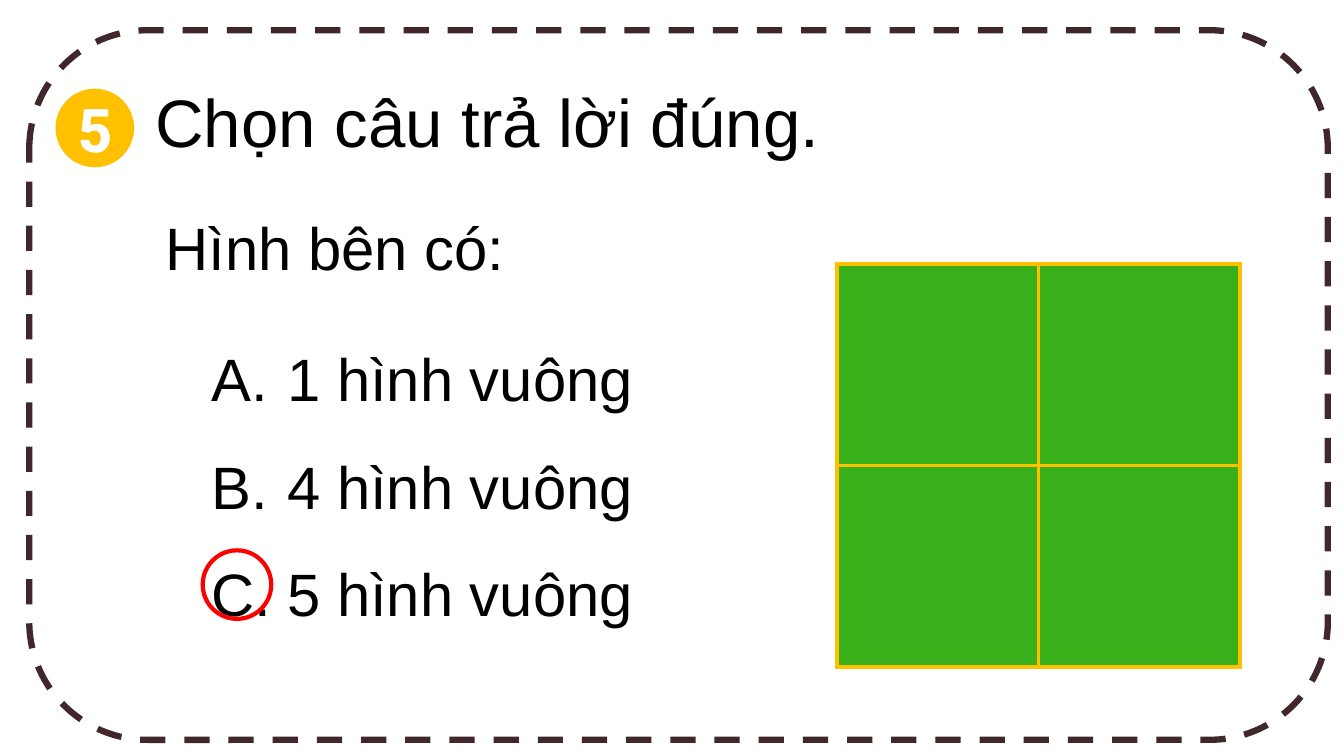
from dataclasses import dataclass
from typing import Optional

from lxml import etree
from pptx import Presentation
from pptx import util as u
from pptx.dml.color import RGBColor
from pptx.enum import dml, shapes, text
from pptx.oxml import ns

SLIDE_WIDTH, SLIDE_HEIGHT = u.Inches(13.33), u.Inches(7.5)


@dataclass(frozen=True)
class Theme:
    paper: str = "FFFFFF"
    ink: str = "000000"
    frame: str = "40272B"
    gold: str = "FFC000"
    green: str = "39AF19"
    red: str = "FF0000"
    body_font: str = "Arial"
    badge_font: str = "Roboto"
    title_size: float = 48
    body_size: float = 42.7
    frame_width: float = 4.5
    line_width: float = 3
    badge_outline: float = 1.45


THEME = Theme()


@dataclass(frozen=True)
class Area:
    """A rectangle in percent of the slide's width and height."""
    left: float
    top: float
    width: float
    height: float

    def box(self) -> tuple[int, int, int, int]:
        return (int(SLIDE_WIDTH * self.left / 100), int(SLIDE_HEIGHT * self.top / 100),
                int(SLIDE_WIDTH * self.width / 100), int(SLIDE_HEIGHT * self.height / 100))


@dataclass(frozen=True)
class Outline:
    kind: shapes.MSO_SHAPE
    area: Area
    fill: Optional[str] = None
    line: Optional[str] = None
    width: float = THEME.line_width
    dashed: bool = False


@dataclass(frozen=True)
class Wording:
    area: Area
    lines: tuple[str, ...]
    size: float = THEME.body_size
    lettered: bool = False


FRAME = Outline(shapes.MSO_SHAPE.ROUNDED_RECTANGLE, Area(2.18, 4, 96.62, 93.87),
                fill=THEME.paper, line=THEME.frame, width=THEME.frame_width, dashed=True)
BADGE = Outline(shapes.MSO_SHAPE.OVAL, Area(4.13, 11.73, 5.85, 10.4), fill=THEME.gold)
ANSWER_RING = Outline(shapes.MSO_SHAPE.OVAL, Area(15.08, 72.8, 5.1, 9.07), line=THEME.red)
SQUARES = Area(62.27, 34.93, 30, 53.33)

WORDINGS = (
    Wording(Area(14.78, 40.4, 45, 42.8),
            ("1 hình vuông", "4 hình vuông", "5 hình vuông"), lettered=True),
    Wording(Area(11.33, 24.27, 45, 16.67), ("Hình bên có:",)),
    Wording(Area(10.58, 7.6, 80, 16.67), ("Chọn câu trả lời đúng.",), size=THEME.title_size),
)


def line_element(tag: str, color: str, width: float):
    line = etree.Element(ns.qn(tag), w=str(int(u.Pt(width))))
    fill = etree.SubElement(line, ns.qn("a:solidFill"))
    etree.SubElement(fill, ns.qn("a:srgbClr"), val=color)
    return line


def draw_outline(slide, outline: Outline):
    shape = slide.shapes.add_shape(outline.kind, *outline.area.box())
    shape.shadow.inherit = False
    if outline.fill:
        shape.fill.solid()
        shape.fill.fore_color.rgb = RGBColor.from_string(outline.fill)
    else:
        shape.fill.background()
    if outline.line:
        shape.line.color.rgb = RGBColor.from_string(outline.line)
        shape.line.width = u.Pt(outline.width)
        if outline.dashed:
            shape.line.dash_style = dml.MSO_LINE.DASH
    else:
        shape.line.fill.background()
    return shape


def write(paragraph, words: str, *, size: float = THEME.body_size, font: str = THEME.body_font,
          color: str = THEME.ink, bold: bool = False,
          align: text.PP_ALIGN = text.PP_ALIGN.JUSTIFY):
    paragraph.alignment = align
    run = paragraph.add_run()
    run.text = words
    run.font.size = u.Pt(size)
    run.font.name = font
    run.font.bold = bold
    run.font.color.rgb = RGBColor.from_string(color)
    return run


def letter_paragraph(paragraph) -> None:
    """Number the paragraph A., B., C. with a hanging indent."""
    paragraph.line_spacing = 1.5
    properties = paragraph._p.get_or_add_pPr()
    indent = int(u.Inches(0.75))
    properties.set("marL", str(indent))
    properties.set("indent", str(-indent))
    etree.SubElement(properties, ns.qn("a:buAutoNum"), type="alphaUcPeriod")


def draw_wording(slide, wording: Wording) -> None:
    frame = slide.shapes.add_textbox(*wording.area.box()).text_frame
    frame.word_wrap = True
    frame.vertical_anchor = text.MSO_ANCHOR.MIDDLE
    frame.margin_left = frame.margin_right = u.Inches(0.13)
    frame.margin_top = frame.margin_bottom = u.Inches(0.07)
    for index, words in enumerate(wording.lines):
        paragraph = frame.add_paragraph() if index else frame.paragraphs[0]
        if wording.lettered:
            letter_paragraph(paragraph)
        write(paragraph, words, size=wording.size)


def draw_badge(slide, number: str) -> None:
    frame = draw_outline(slide, BADGE).text_frame
    frame.vertical_anchor = text.MSO_ANCHOR.MIDDLE
    digit = write(frame.paragraphs[0], number, font=THEME.badge_font, color=THEME.paper,
                  bold=True, align=text.PP_ALIGN.CENTER)
    digit._r.get_or_add_rPr().insert(0, line_element("a:ln", THEME.paper, THEME.badge_outline))


def draw_squares(slide, count: int) -> None:
    """Draw a count by count table of equal squares."""
    table = slide.shapes.add_table(count, count, *SQUARES.box()).table
    table.first_row = table.horz_banding = False
    for cell in table.iter_cells():
        cell.fill.solid()
        cell.fill.fore_color.rgb = RGBColor.from_string(THEME.green)
        properties = cell._tc.get_or_add_tcPr()
        for position, side in enumerate("LRTB"):
            properties.insert(position, line_element(f"a:ln{side}", THEME.gold, THEME.line_width))


def main() -> None:
    deck = Presentation()
    deck.slide_width, deck.slide_height = SLIDE_WIDTH, SLIDE_HEIGHT
    slide = deck.slides.add_slide(deck.slide_layouts[6])
    draw_outline(slide, FRAME)
    for wording in WORDINGS:
        draw_wording(slide, wording)
    draw_badge(slide, "5")
    draw_outline(slide, ANSWER_RING)
    draw_squares(slide, 2)
    deck.save("out.pptx")


if __name__ == "__main__":
    main()
